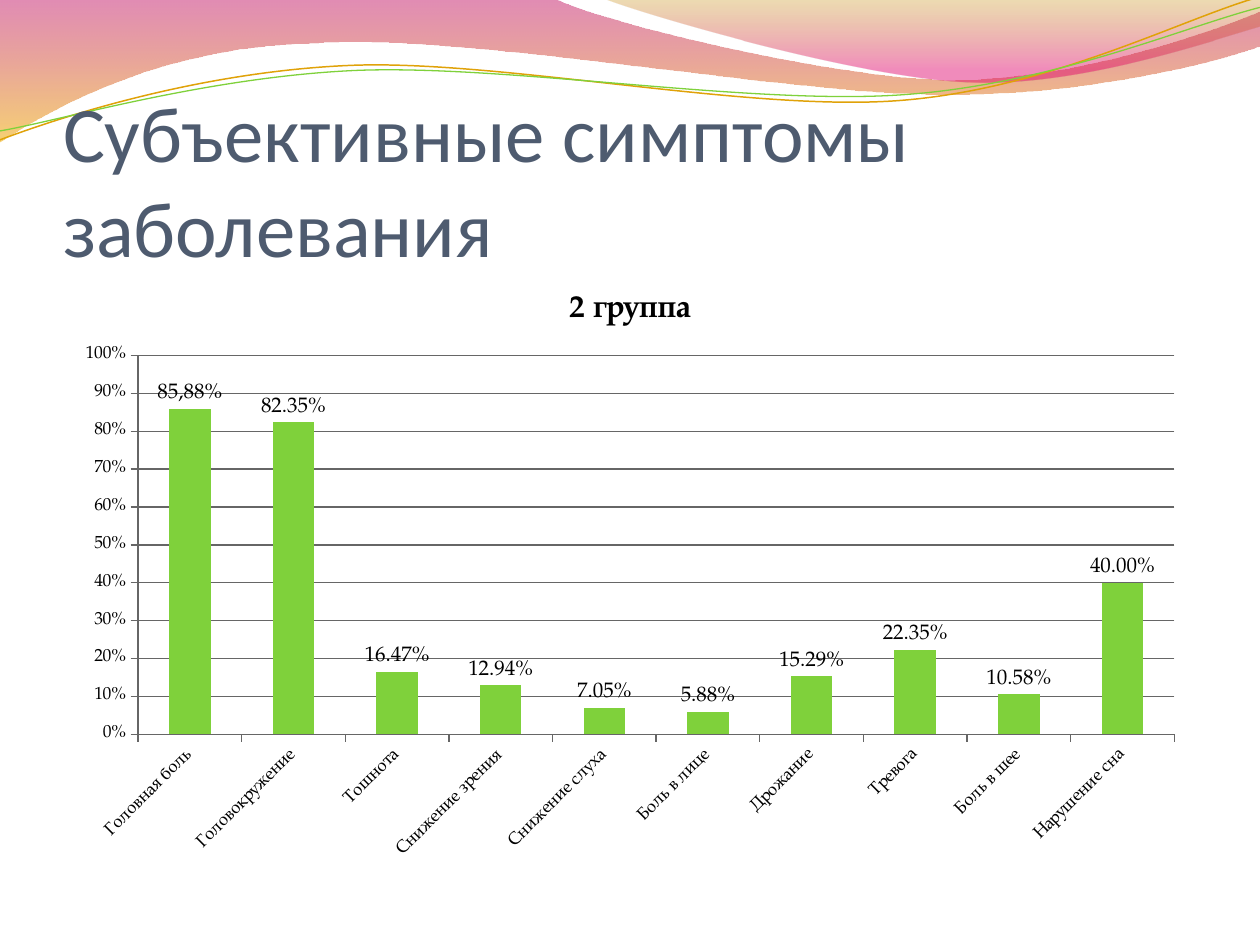
from pptx import Presentation
from pptx.chart.data import CategoryChartData as ChartData
from pptx.dml.color import RGBColor
from pptx.enum.chart import XL_CHART_TYPE as Kind, XL_LABEL_POSITION as Spot, XL_TICK_MARK as Tick
from pptx.enum.text import MSO_ANCHOR as Anchor, MSO_AUTO_SIZE as Fit, PP_ALIGN as Align
from pptx.oxml.ns import qn
from pptx.oxml.xmlchemy import OxmlElement as Node
from pptx.util import Cm, Pt


def rgb(code):
    return RGBColor.from_string(code)


def draw(start, segs, close):
    """Draw an outline in cm: a pair is a line end, six numbers are a Bezier curve."""
    pts = [(Cm(s[i]), Cm(s[i + 1])) for s in segs for i in range(0, len(s), 2)]
    pen = slide.shapes.build_freeform(Cm(start[0]), Cm(start[1]), scale=1.0)
    pen.add_line_segments(pts, close=close)
    shape = pen.convert_to_shape()
    shape.shadow.inherit = False
    geom = shape._element.find(".//" + qn("a:path"))
    lines = iter(geom.findall(qn("a:lnTo")))
    for seg in segs:
        part = [next(lines) for _ in range(len(seg) // 2)]
        if len(part) == 3:
            curve = Node("a:cubicBezTo")
            part[0].addprevious(curve)
            for line in part:
                curve.append(line[0])
                geom.remove(line)
    return shape


prs = Presentation()
prs.slide_width, prs.slide_height = Cm(25.4), Cm(19.05)
slide = prs.slides.add_slide(prs.slide_layouts[5])

# Bands: start, segments, gradient stops (place, colour, opacity in %)
bands = [
    ((0, 0), [(11.18, -0.03),
              (12.09, 0.43, 16.87, 1.6, 19.25, 1.6),
              (21.67, 1.6, 24.33, 0.66, 25.4, 0.23),
              (25.43, 0.91),
              (24.97, 1.12, 22.1, 1.93, 18.95, 1.9),
              (15.8, 1.9, 9.7, 0.71, 6.53, 0.86),
              (3.28, 0.91, 1.17, 2.11, -0.03, 2.87)],
     [(0, "BD0059", 45), (1, "F0AB00", 55)]),
    ((12.17, -0.03), [(12.93, 0.28, 17.32, 1.57, 19.53, 1.65),
                      (21.74, 1.75, 24.41, 0.81, 25.4, 0.53),
                      (25.4, 0)],
     [(0, "C38B00", 30), (0.8, "E1006B", 45)]),
]
for start, segs, stops in bands:
    band = draw(start, segs, True)
    band.line.fill.background()
    band.fill.gradient()
    band.fill.gradient_angle = 270
    for stop, (place, code, alpha) in zip(band.fill.gradient_stops, stops):
        stop.position = place
        stop.color.rgb = rgb(code)
        node = Node("a:alpha")
        node.set("val", str(alpha * 1000))
        stop._gs.find(qn("a:srgbClr")).append(node)

# Waves: start, segments, colour, width
waves = [
    ((0, 2.82), [(1.22, 2.36, 4.01, 1.45, 7.04, 1.32),
                 (10.03, 1.19, 15.06, 2.26, 18.11, 2.03),
                 (21.16, 1.8, 23.83, 0.38, 25.35, -0.05)], "E0A209", 0.85),
    ((0, 2.64), [(1.19, 2.44, 4.17, 1.55, 7.19, 1.42),
                 (10.24, 1.3, 15.16, 2.13, 18.21, 1.91),
                 (21.23, 1.7, 23.9, 0.53, 25.4, 0.15)], "7FD13B", 0.75),
]
for start, segs, code, width in waves:
    wave = draw(start, segs, False)
    wave.fill.background()
    wave.line.color.rgb = rgb(code)
    wave.line.width = Pt(width)

# Title, in front of the bands
title = slide.shapes.title
slide.shapes._spTree.append(title._element)
for key, val in dict(left=Cm(1.27), top=Cm(2.51), width=Cm(22.86), height=Cm(3)).items():
    setattr(title, key, val)
frame = title.text_frame
frame.text = "Субъективные симптомы заболевания"
for key, val in dict(margin_left=0, margin_right=0, margin_top=Cm(0.13), margin_bottom=0,
                     vertical_anchor=Anchor.BOTTOM, word_wrap=True,
                     auto_size=Fit.NONE).items():
    setattr(frame, key, val)
para = frame.paragraphs[0]
para.alignment = Align.LEFT
font = para.runs[0].font
font.name, font.size = "Calibri", Pt(45)
font.color.rgb = rgb("4E5B6F")

# Chart
rates = {
    "Головная боль": 0.8588, "Головокружение": 0.8235, "Тошнота": 0.1647,
    "Снижение зрения": 0.1294, "Снижение слуха": 0.0705, "Боль в лице": 0.0588,
    "Дрожание": 0.1529, "Тревога": 0.2235, "Боль в шее": 0.1058, "Нарушение сна": 0.4,
}
data = ChartData(number_format="0.00%")
data.categories = list(rates)
data.add_series("2 группа", list(rates.values()))
chart = slide.shapes.add_chart(Kind.COLUMN_CLUSTERED, Cm(1.27), Cm(5.38),
                               Cm(22.86), Cm(12.19), data).chart
chart.has_legend = False
chart.has_title = True
head = chart.chart_title.text_frame
head.text = "2 группа"
chart.chart_title.include_in_layout = False

plot = chart.plots[0]
plot.gap_width = 150
plot.vary_by_categories = False
bars = plot.series[0]
bars.format.fill.solid()
bars.format.fill.fore_color.rgb = rgb("7FD13B")
tags = bars.data_labels
for key, val in dict(show_value=True, number_format="0.00%", number_format_is_linked=False,
                     position=Spot.OUTSIDE_END).items():
    setattr(tags, key, val)
first = bars.points[0].data_label
first.text_frame.text = "85,88%"
first.position = Spot.OUTSIDE_END

cat, rate = chart.category_axis, chart.value_axis
for key, val in dict(minimum_scale=0, maximum_scale=1, major_unit=0.1,
                     has_major_gridlines=True).items():
    setattr(rate, key, val)
rate.tick_labels.number_format = "0%"
rate.tick_labels.number_format_is_linked = False
for axis in (cat, rate):
    axis.major_tick_mark = Tick.OUTSIDE
    axis.minor_tick_mark = Tick.NONE
for part in (cat, rate, rate.major_gridlines):
    part.format.line.color.rgb = rgb("666666")
    part.format.line.width = Pt(0.75)

fonts = [
    (chart.font, 10, False), (cat.tick_labels.font, 10, False),
    (rate.tick_labels.font, 10, False), (tags.font, 12, False),
    (first.text_frame.paragraphs[0].runs[0].font, 12, False),
    (head.paragraphs[0].runs[0].font, 18, True),
]
for font, size, bold in fonts:
    font.name, font.size, font.bold = "TeX Gyre Pagella", Pt(size), bold
    font.color.rgb = rgb("000000")
cat._element.find(qn("c:txPr")).find(qn("a:bodyPr")).set("rot", "-2700000")

prs.save("out.pptx")
